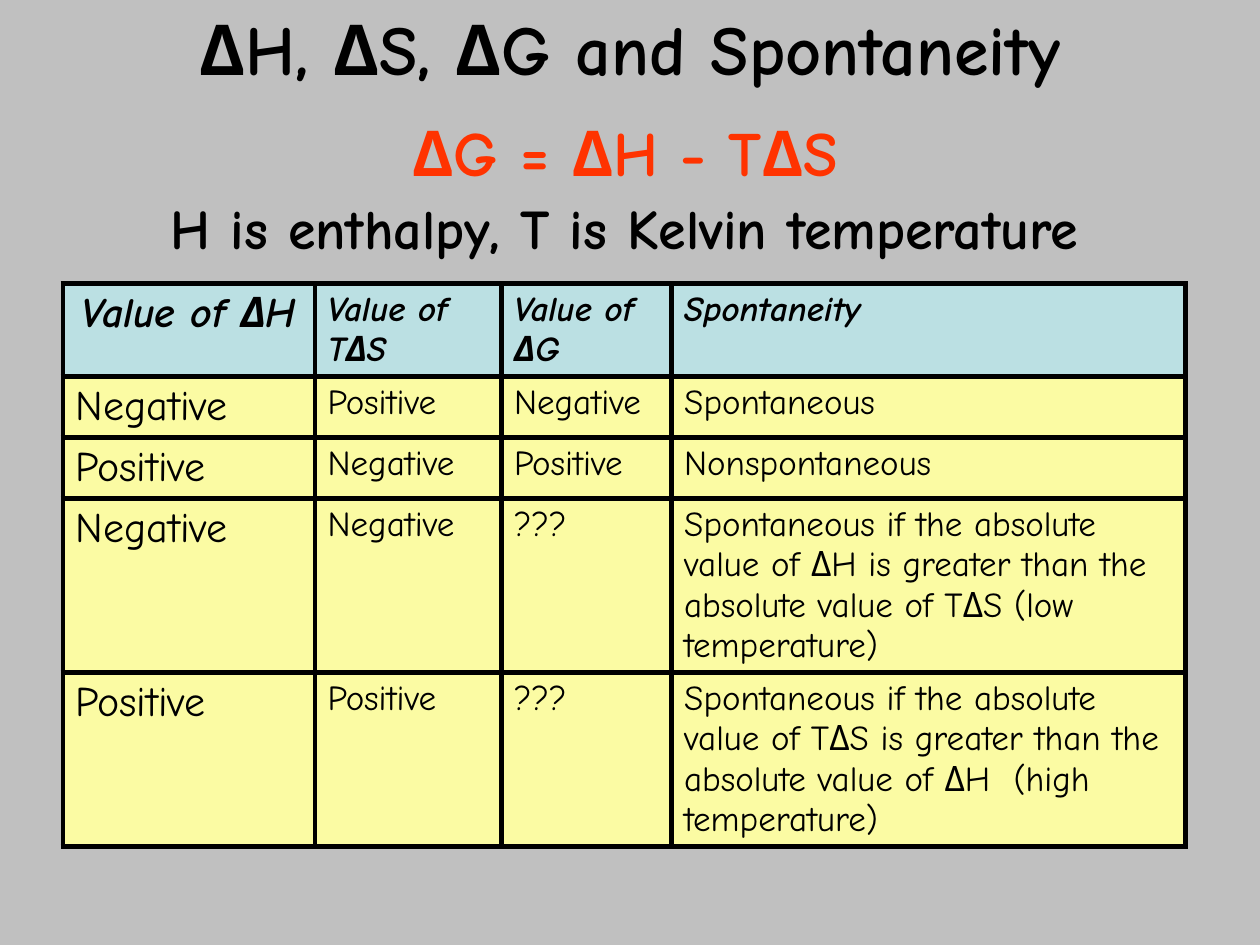
from lxml import etree
from pptx import Presentation
from pptx import util as u
from pptx.dml.color import RGBColor
from pptx.enum import text
from pptx.oxml import ns

BLACK = RGBColor(0, 0, 0)
GREY = RGBColor(0xC0, 0xC0, 0xC0)
RED = RGBColor(0xFF, 0x33, 0x00)
BLUE = RGBColor(0xBB, 0xE0, 0xE3)
CREAM = RGBColor(0xFB, 0xFB, 0xA3)

WIDTHS = [2, 1.48, 1.35, 4.08]
HEIGHTS = [0.74, 0.48, 0.48, 1.38, 1.38]
ROWS = [
    ["Value of ΔH", "Value of TΔS", "Value of ΔG", "Spontaneity"],
    ["Negative", "Positive", "Negative", "Spontaneous"],
    ["Positive", "Negative", "Positive", "Nonspontaneous"],
    ["Negative", "Negative", "???",
     "Spontaneous if the absolute value of ΔH is greater than "
     "the absolute value of TΔS (low temperature)"],
    ["Positive", "Positive", "???",
     "Spontaneous if the absolute value of TΔS is greater than "
     "the absolute value of ΔH  (high temperature)"],
]


class Deck:
    """Holds the style and the current slide."""

    font = "Comic Neue"

    def __init__(self, prs):
        self.slide = prs.slides.add_slide(prs.slide_layouts[5])
        fill = self.slide.background.fill
        fill.solid()
        fill.fore_color.rgb = GREY

    def style(self, para, size, color=BLACK, bold=True, slant=False, mid=True):
        para.alignment = text.PP_ALIGN.CENTER if mid else text.PP_ALIGN.LEFT
        for run in para.runs:
            font = run.font
            font.name, font.size = self.font, u.Pt(size)
            font.bold, font.italic = bold, slant
            font.color.rgb = color

    def title(self, words, left, top, width, height):
        shape = self.slide.shapes.title
        shape.left, shape.top = u.Inches(left), u.Inches(top)
        shape.width, shape.height = u.Inches(width), u.Inches(height)
        frame = shape.text_frame
        frame.text = words
        frame.auto_size = text.MSO_AUTO_SIZE.NONE
        frame.vertical_anchor = text.MSO_ANCHOR.MIDDLE
        self.style(frame.paragraphs[0], 40)

    def lines(self, items, left, top, width, height):
        box = self.slide.shapes.add_textbox(*map(u.Inches, (left, top, width, height)))
        frame = box.text_frame
        frame.word_wrap = True
        frame.text = "\n".join(words for words, _, _ in items)
        for para, (_, size, color) in zip(frame.paragraphs, items):
            para.line_spacing = 0.9
            para.space_before = u.Pt(size * 0.2)
            self.style(para, size, color)

    def border(self, cell, points):
        props = cell._tc.get_or_add_tcPr()
        for side in ("a:lnL", "a:lnR", "a:lnT", "a:lnB"):
            line = etree.SubElement(props, ns.qn(side), w=str(u.Pt(points)))
            fill = etree.SubElement(line, ns.qn("a:solidFill"))
            etree.SubElement(fill, ns.qn("a:srgbClr"), val=str(BLACK))

    def table(self, rows, widths, heights, left, top):
        frame = self.slide.shapes.add_table(
            len(rows), len(widths), u.Inches(left), u.Inches(top),
            u.Inches(sum(widths)), u.Inches(sum(heights)))
        grid = frame.table
        grid.horz_banding = False
        for col, width in zip(grid.columns, widths):
            col.width = u.Inches(width)
        for row, height in zip(grid.rows, heights):
            row.height = u.Inches(height)
        for r, row in enumerate(rows):
            for c, words in enumerate(row):
                cell, head = grid.cell(r, c), r == 0
                self.border(cell, 3)
                cell.fill.solid()
                cell.fill.fore_color.rgb = BLUE if head else CREAM
                cell.text_frame.text = words
                self.style(cell.text_frame.paragraphs[0], 24 if c == 0 else 20,
                           bold=head, slant=head, mid=head and c == 0)


def main():
    prs = Presentation()
    prs.slide_width, prs.slide_height = u.Inches(10), u.Inches(7.5)
    deck = Deck(prs)

    # Heading
    deck.title("ΔH, ΔS, ΔG and Spontaneity", 0.5, -0.25, 9, 1.25)

    # Sign rules
    deck.table(ROWS, WIDTHS, HEIGHTS, 0.5, 2.25)

    # Formula and its terms
    deck.lines([("ΔG = ΔH - TΔS", 36, RED),
                ("H is enthalpy, T is Kelvin temperature", 32, BLACK)],
               0.67, 0.92, 8.58, 1.33)

    prs.save("out.pptx")


if __name__ == "__main__":
    main()
